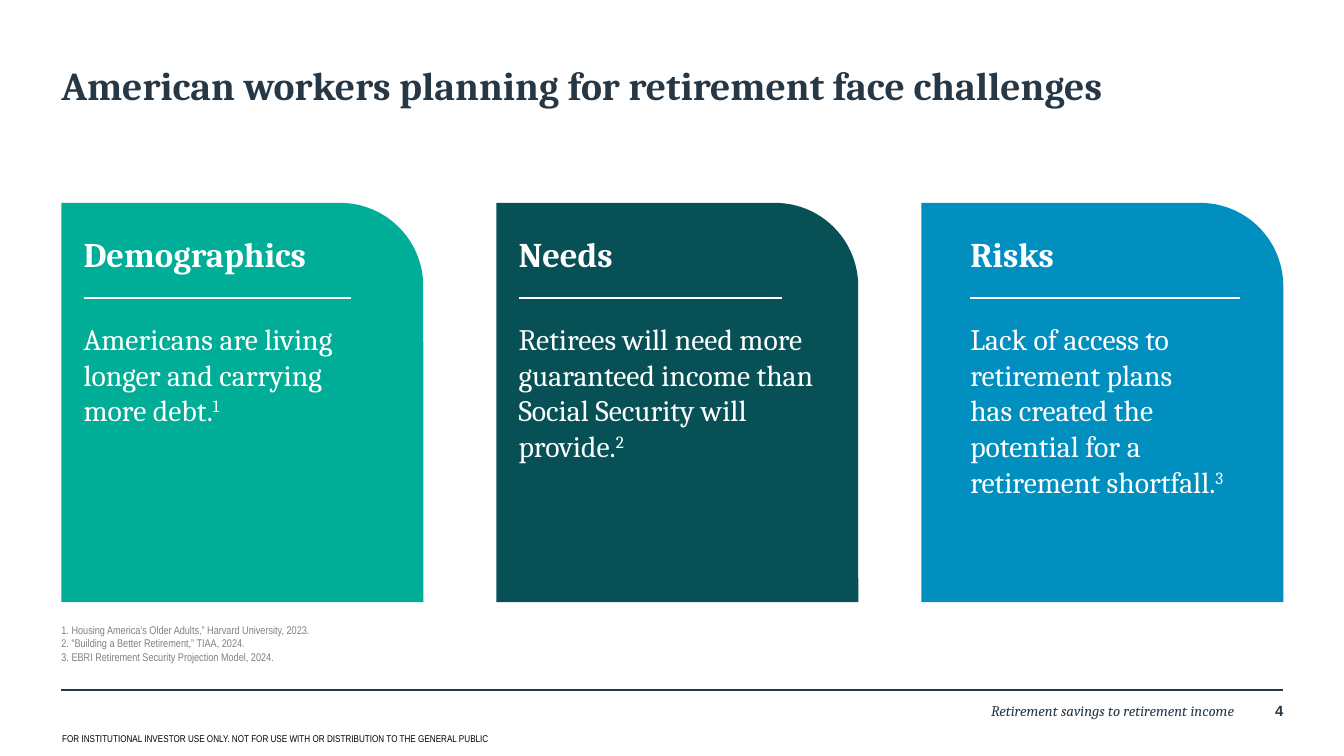
from dataclasses import dataclass

from lxml import etree
from pptx import Presentation
from pptx.dml.color import RGBColor
from pptx.enum.shapes import MSO_CONNECTOR, MSO_SHAPE
from pptx.enum.text import MSO_ANCHOR, MSO_AUTO_SIZE, PP_ALIGN
from pptx.oxml.ns import qn
from pptx.shapes.base import BaseShape
from pptx.slide import Slide
from pptx.util import Pt

STRAIGHT = MSO_CONNECTOR.STRAIGHT
ROUNDED_CORNER = MSO_SHAPE.ROUND_1_RECTANGLE
TOP, BOTTOM = MSO_ANCHOR.TOP, MSO_ANCHOR.BOTTOM
LEFT, RIGHT = PP_ALIGN.LEFT, PP_ALIGN.RIGHT
GROW, FIXED = MSO_AUTO_SIZE.SHAPE_TO_FIT_TEXT, MSO_AUTO_SIZE.NONE

NAVY = RGBColor(0x26, 0x37, 0x46)
GREEN = RGBColor(0x00, 0xAD, 0x97)
TEAL = RGBColor(0x07, 0x51, 0x56)
BLUE = RGBColor(0x00, 0x8F, 0xBE)
GRAY = RGBColor(0x80, 0x80, 0x80)
BLACK = RGBColor(0x00, 0x00, 0x00)
WHITE = RGBColor(0xFF, 0xFF, 0xFF)

SERIF, SANS, NARROW = "Cambria", "Arial", "Arial Narrow"
MARGIN, CONTENT_WIDTH = 49.7, 989.3
CARD_TOP, CARD_WIDTH, CARD_HEIGHT = 164.2, 293, 323.3


@dataclass(frozen=True)
class Card:
    left: float
    color: RGBColor
    heading: str
    message: str
    note: str
    indent: float
    heading_width: float
    message_width: float
    message_height: float
    rule_width: float


CARDS = [
    Card(MARGIN, GREEN, "Demographics",
         "Americans are living longer and carrying more debt.", "1",
         18, 247.7, 216.7, 87.1, 216.7),
    Card(401.8, TEAL, "Needs",
         "Retirees will need more guaranteed income than Social Security will provide.", "2",
         18, 167, 247.7, 116.6, 213.1),
    Card(745.9, BLUE, "Risks",
         "Lack of access to retirement plans\nhas created the potential for a retirement shortfall.", "3",
         39.6, 167, 228.2, 145.4, 218.2),
]

FOOTNOTES = [
    "1. Housing America’s Older Adults,” Harvard University, 2023.",
    "2. “Building a Better Retirement,” TIAA, 2024.",
    "3. EBRI Retirement Security Projection Model, 2024.",
]


def place(box: BaseShape, left: float, top: float, width: float, height: float) -> BaseShape:
    box.left, box.top, box.width, box.height = Pt(left), Pt(top), Pt(width), Pt(height)
    return box


def add_box(page: Slide, left: float, top: float, width: float, height: float) -> BaseShape:
    return page.shapes.add_textbox(Pt(left), Pt(top), Pt(width), Pt(height))


def write_text(box: BaseShape, *lines: str, size: float, color: RGBColor, font: str = SERIF,
               bold: bool = False, italic: bool = False, align: PP_ALIGN = LEFT,
               anchor: MSO_ANCHOR = TOP, fit: MSO_AUTO_SIZE = FIXED, after: float = 0,
               inset: tuple[float, float] = (0, 0), note: str = "") -> None:
    frame = box.text_frame
    frame.word_wrap = True
    frame.auto_size = fit
    frame.vertical_anchor = anchor
    frame.margin_left = frame.margin_right = Pt(inset[0])
    frame.margin_top = frame.margin_bottom = Pt(inset[1])
    for index, line in enumerate(lines):
        para = frame.add_paragraph() if index else frame.paragraphs[0]
        properties = para._p.get_or_add_pPr()
        properties.set("marL", "0")
        properties.set("indent", "0")
        etree.SubElement(properties, qn("a:buNone"))
        para.alignment = align
        para.space_before, para.space_after = Pt(0), Pt(after)
        for part_index, part in enumerate(line.split("\n")):
            if part_index:
                para.add_line_break()
            para.add_run().text = part
        if note:
            mark = para.add_run()
            mark.text = note
            mark._r.get_or_add_rPr().set("baseline", "30000")
        for span in para.runs:
            span.font.name, span.font.size = font, Pt(size)
            span.font.bold, span.font.italic = bold, italic
            span.font.color.rgb = color


def draw_rule(page: Slide, left: float, top: float, width: float,
              color: RGBColor, weight: float) -> None:
    rule = page.shapes.add_connector(STRAIGHT, Pt(left), Pt(top), Pt(left + width), Pt(top))
    rule.line.color.rgb = color
    rule.line.width = Pt(weight)
    etree.SubElement(rule._element.spPr, qn("a:effectLst"))


def draw_card(page: Slide, card: Card) -> None:
    panel = page.shapes.add_shape(ROUNDED_CORNER, Pt(card.left), Pt(CARD_TOP),
                                  Pt(CARD_WIDTH), Pt(CARD_HEIGHT))
    panel.adjustments[0] = 0.23
    panel.shadow.inherit = False
    panel.fill.solid()
    panel.fill.fore_color.rgb = card.color
    panel.line.fill.background()
    left = card.left + card.indent
    write_text(add_box(page, left, 188.6, card.heading_width, 33.8), card.heading,
               size=28, color=WHITE, bold=True, fit=GROW, after=6)
    write_text(add_box(page, left, 259.9, card.message_width, card.message_height), card.message,
               size=24, color=WHITE, fit=GROW, after=6, note=card.note)
    draw_rule(page, left, 241.2, card.rule_width, WHITE, 1)


def draw_footer(page: Slide) -> None:
    draw_rule(page, MARGIN, 558.7, CONTENT_WIDTH, NAVY, 2)
    write_text(add_box(page, 383, 568.1, 616.3, 28.8), "Retirement savings to retirement income",
               size=12, color=NAVY, italic=True, align=RIGHT)
    write_text(add_box(page, 1010.2, 568.1, 28.8, 23.8), "4",
               size=12, color=NAVY, font=SANS, bold=True, align=RIGHT)
    write_text(add_box(page, 43.2, 589.7, 795.6, 17.3),
               "FOR INSTITUTIONAL INVESTOR USE ONLY. NOT FOR USE WITH OR DISTRIBUTION TO THE GENERAL PUBLIC",
               size=8, color=BLACK, font=NARROW, fit=GROW, inset=(7.2, 3.6))


def main() -> None:
    deck = Presentation()
    deck.slide_width, deck.slide_height = Pt(1088), Pt(612)
    page = deck.slides.add_slide(deck.slide_layouts[1])
    title = place(page.shapes.title, MARGIN, MARGIN, CONTENT_WIDTH, 81.4)
    write_text(title, "American workers planning for retirement face challenges",
               size=32, color=NAVY, bold=True)
    sources = place(page.placeholders[1], MARGIN, 507.6, CONTENT_WIDTH, 29.5)
    write_text(sources, *FOOTNOTES, size=9, color=GRAY, font=NARROW, anchor=BOTTOM)
    for card in CARDS:
        draw_card(page, card)
    draw_footer(page)
    deck.save("out.pptx")


if __name__ == "__main__":
    main()
